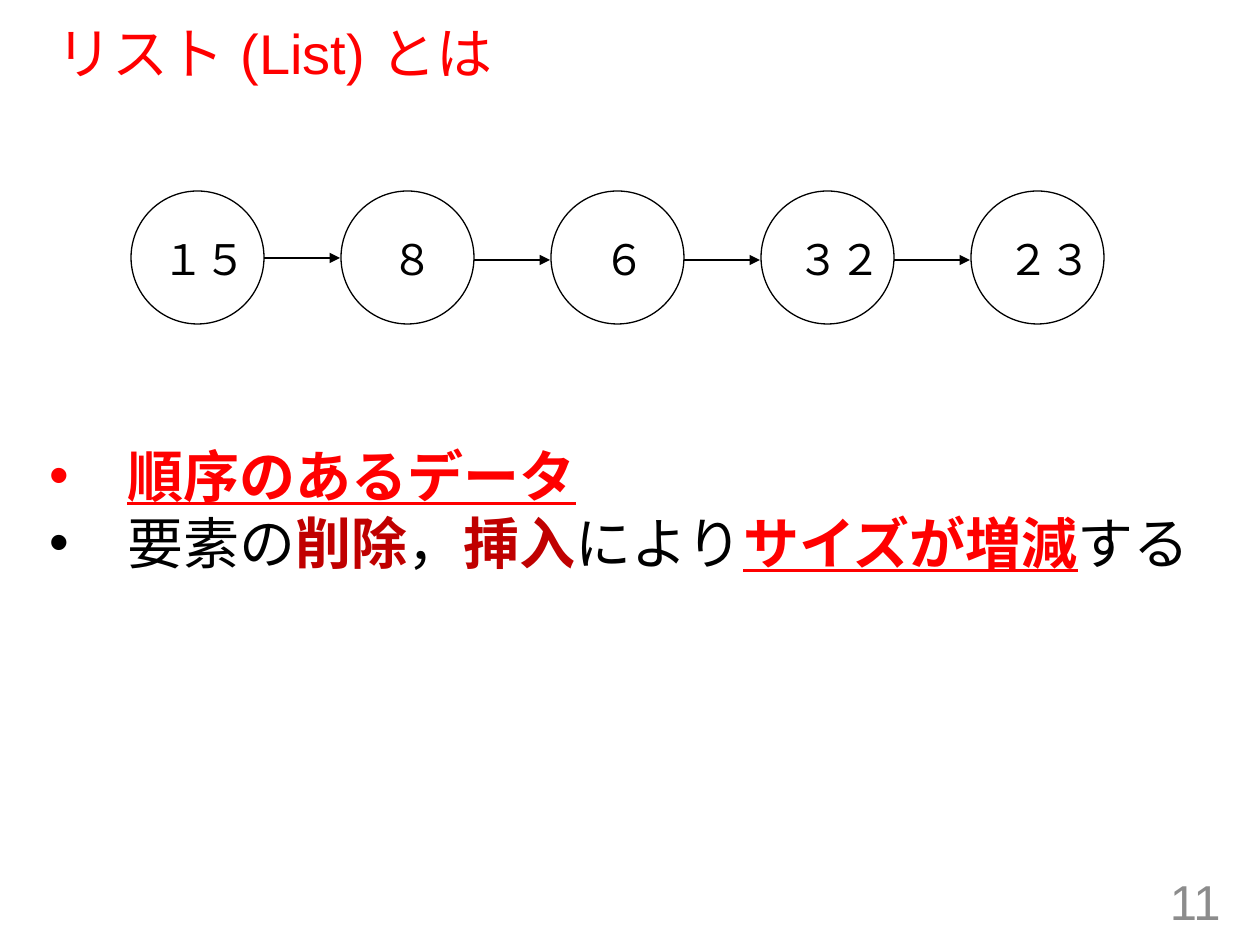
from lxml.etree import SubElement
from pptx import Presentation
from pptx.dml.color import RGBColor
from pptx.enum.shapes import MSO_CONNECTOR, MSO_SHAPE
from pptx.enum.text import MSO_ANCHOR, PP_ALIGN
from pptx.oxml.ns import qn
from pptx.util import Pt

PX = 914400 / 126
FONT = "Arial"
BLACK = RGBColor(0x00, 0x00, 0x00)
RED = RGBColor(0xFF, 0x00, 0x00)
DARK_RED = RGBColor(0xC0, 0x00, 0x00)
GRAY = RGBColor(0x8C, 0x8C, 0x8C)

# Node value, then the offset and width of its label
NODES = [("１５", 19, 111), ("８", 38, 68), ("６", 40, 68),
         ("３２", 24, 111), ("２３", 24, 111)]
PLAIN = {"color": BLACK}
ACTION = {"color": DARK_RED, "bold": True}
KEY = {"color": RED, "bold": True, "underline": True}
POINTS = [
    [("順序のあるデータ", KEY)],
    [("要素の", PLAIN), ("削除", ACTION), ("，", PLAIN), ("挿入", ACTION),
     ("により", PLAIN), ("サイズが増減", KEY), ("する", PLAIN)],
]


def px(*lengths):
    return [round(length * PX) for length in lengths]


def add_text(paragraph, text, size=32, color=BLACK, bold=False, underline=False):
    run = paragraph.add_run()
    run.text = text
    font = run.font
    font.size, font.name = Pt(size), FONT
    font.bold, font.underline = bold, underline
    font.color.rgb = color
    SubElement(font._element, qn("a:ea"), typeface=FONT)


def add_frame(slide, left, top, width, height, wrap=False):
    frame = slide.shapes.add_textbox(*px(left, top, width, height)).text_frame
    frame.word_wrap = wrap
    return frame


def add_bullet(paragraph, indent):
    properties = paragraph._p.get_or_add_pPr()
    properties.set("marL", str(indent))
    properties.set("indent", str(-indent))
    SubElement(properties, qn("a:buFont"), typeface=FONT)
    SubElement(properties, qn("a:buChar"), char="•")


def add_arrow(slide, left, right, y):
    arrow = slide.shapes.add_connector(MSO_CONNECTOR.STRAIGHT, *px(left, y, right, y))
    arrow.line.color.rgb = BLACK
    arrow.line.width = Pt(0.75)
    SubElement(arrow.line._get_or_add_ln(), qn("a:tailEnd"), type="triangle")
    SubElement(arrow._element.spPr, qn("a:effectLst"))


def add_title(slide, left, top, width, height):
    title = slide.shapes.title
    title.left, title.top, title.width, title.height = px(left, top, width, height)
    frame = title.text_frame
    frame.vertical_anchor = MSO_ANCHOR.MIDDLE
    heading = frame.paragraphs[0]
    heading.alignment = PP_ALIGN.LEFT
    heading.line_spacing = 0.9
    add_text(heading, "リスト (List) とは", color=RED)


def add_linked_list(slide, left, top, pitch, diameter):
    for index, (value, offset, label_width) in enumerate(NODES):
        x = left + index * pitch
        node = slide.shapes.add_shape(MSO_SHAPE.OVAL, *px(x, top, diameter, diameter))
        node.shadow.inherit = False
        node.fill.background()
        node.line.color.rgb = BLACK
        node.line.width = Pt(0.75)
        label = add_frame(slide, x + offset, top + 36, label_width, 64)
        add_text(label.paragraphs[0], value, size=24)
        # Link to the next node; the first one sits slightly higher
        if index < len(NODES) - 1:
            y = top + (69 if index else 67)
            add_arrow(slide, x + diameter, x + pitch - 1, y)


def add_points(slide, left, top, width, height):
    frame = add_frame(slide, left, top, width, height)
    for index, point in enumerate(POINTS):
        paragraph = frame.add_paragraph() if index else frame.paragraphs[0]
        add_bullet(paragraph, *px(78))
        for text, style in point:
            add_text(paragraph, text, **style)


def add_page_number(slide, left, top, width, height):
    frame = add_frame(slide, left, top, width, height, wrap=True)
    frame.vertical_anchor = MSO_ANCHOR.MIDDLE
    number = frame.paragraphs[0]
    number.alignment = PP_ALIGN.RIGHT
    add_text(number, "11", size=28, color=GRAY)


def main():
    presentation = Presentation()
    presentation.slide_width, presentation.slide_height = px(1260, 945)
    slide = presentation.slides.add_slide(presentation.slide_layouts[5])
    add_title(slide, 44, 24, 1166, 64)
    add_linked_list(slide, 131, 191, pitch=210, diameter=133)
    add_points(slide, 37, 435, 1179, 217)
    add_page_number(slide, 949, 876, 284, 50)
    presentation.save("out.pptx")


if __name__ == "__main__":
    main()
